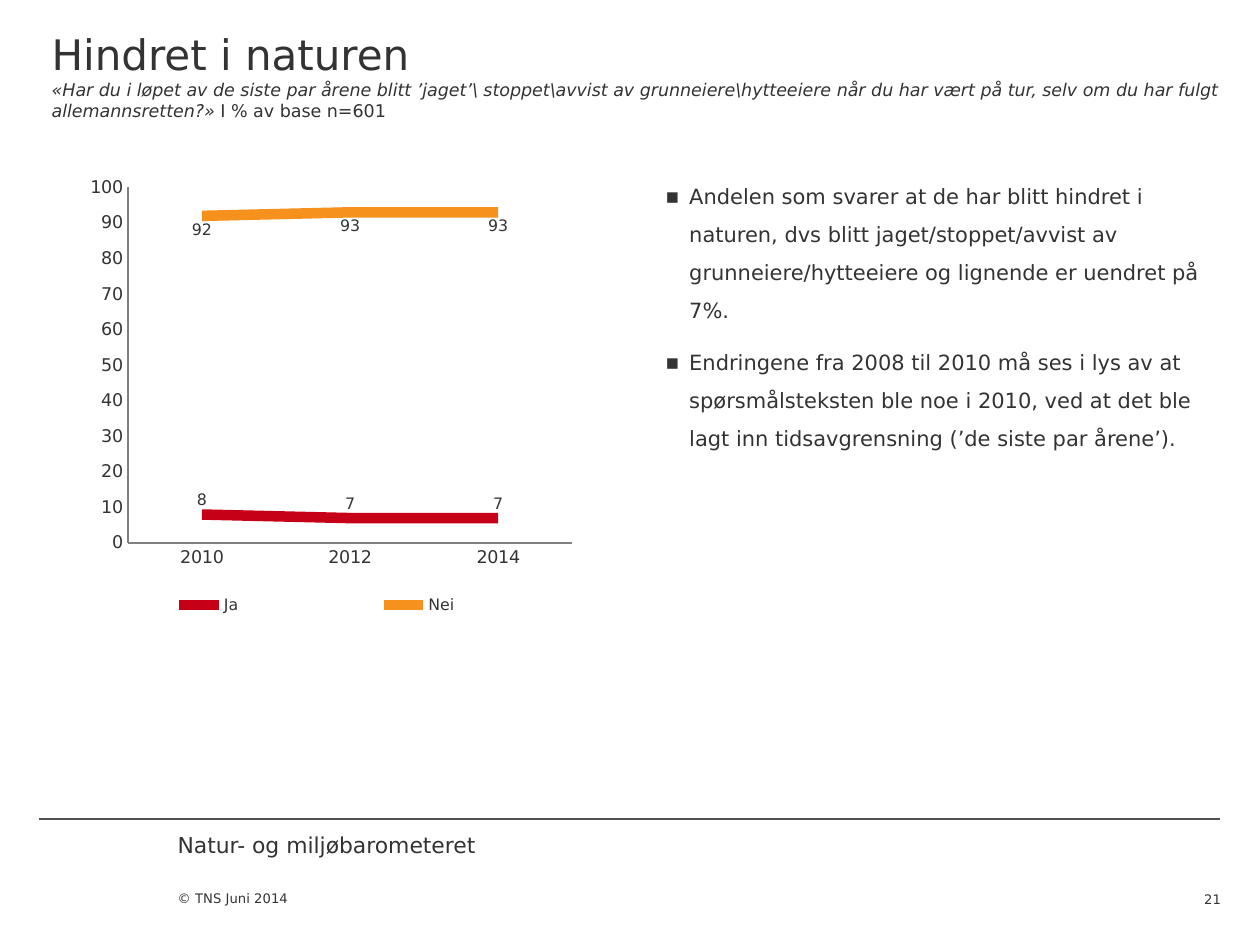
"""Build the slide "Hindret i naturen": a line chart beside two bullet points."""
from lxml.etree import SubElement
from pptx import Presentation
from pptx.chart.data import CategoryChartData
from pptx.dml.color import RGBColor
from pptx.enum.chart import XL_CHART_TYPE as ChartType, XL_LABEL_POSITION as LabelPosition
from pptx.enum.chart import XL_LEGEND_POSITION as LegendPosition, XL_MARKER_STYLE as MarkerStyle
from pptx.enum.chart import XL_TICK_MARK as TickMark
from pptx.enum.shapes import MSO_CONNECTOR as Connector
from pptx.enum.text import MSO_ANCHOR as Anchor, MSO_AUTO_SIZE as AutoSize, PP_ALIGN as Align
from pptx.oxml import parse_xml
from pptx.oxml.ns import nsdecls, qn
from pptx.util import Inches, Pt

FONT = "DejaVu Sans"
COLORS = {"text": "333333", "rule": "525252", "axis": "808080", "Ja": "C50017", "Nei": "F7911E"}


def write(text, paragraph=None, shape=None, box=None, size=12, italic=False,
          align=Align.LEFT, anchor=Anchor.TOP, top=0, right=0, bottom=0):
    """Add a run of text, first placing the shape that holds it when one is given."""
    if shape is not None:
        shape.left, shape.top, shape.width, shape.height = [Inches(value) for value in box]
        frame = shape.text_frame
        frame.word_wrap = True
        frame.auto_size = AutoSize.NONE
        frame.vertical_anchor = anchor
        frame.margin_left, frame.margin_top = 0, Inches(top)
        frame.margin_right, frame.margin_bottom = Inches(right), Inches(bottom)
        paragraph = frame.paragraphs[0]
    paragraph.alignment = align
    run = paragraph.add_run()
    run.text = text
    font = run.font
    font.name, font.size, font.italic, font.bold = FONT, Pt(size), italic, False
    font.color.rgb = RGBColor.from_string(COLORS["text"])
    return paragraph


def set_layout(element, index, x, y, width, height, inner=False):
    """Give a chart part a fixed place, in fractions of the chart."""
    for old in element.findall(qn("c:layout")):
        element.remove(old)
    layout = parse_xml(f"<c:layout {nsdecls('c')}><c:manualLayout/></c:layout>")
    entries = [("layoutTarget", "inner")] if inner else []
    entries += [("xMode", "edge"), ("yMode", "edge"), ("x", x), ("y", y), ("w", width), ("h", height)]
    for tag, value in entries:
        SubElement(layout[0], qn(f"c:{tag}")).set("val", str(value))
    element.insert(index, layout)


presentation = Presentation()
presentation.slide_width, presentation.slide_height = Inches(10), Inches(7.5)
slide = presentation.slides.add_slide(presentation.slide_layouts[1])
shapes = slide.shapes

rule = shapes.add_connector(Connector.STRAIGHT, Inches(0.31), Inches(6.5), Inches(9.68), Inches(6.5))
rule.line.color.rgb = RGBColor.from_string(COLORS["rule"])
rule.line.width = Pt(0.75)
SubElement(rule._element.spPr, qn("a:effectLst"))

title = write("Hindret i naturen", shape=shapes.title, box=(0.41, 0, 9.37, 1.13), size=24, top=0.23)
title.add_line_break()
write("«Har du i løpet av de siste par årene blitt ’jaget’\\ stoppet\\avvist av grunneiere\\hytteeiere "
      "når du har vært på tur, selv om du har fulgt allemannsretten?» ", title, size=10, italic=True)
write("I % av base n=601", title, size=10)

bullets = [
    "Andelen som svarer at de har blitt hindret i naturen, dvs blitt jaget/stoppet/avvist av "
    "grunneiere/hytteeiere og lignende er uendret på 7%.",
    "Endringene fra 2008 til 2010 må ses i lys av at spørsmålsteksten ble noe i 2010, ved at det ble "
    "lagt inn tidsavgrensning (’de siste par årene’).",
]
body = slide.placeholders[1]
for number, text in enumerate(bullets):
    if number == 0:
        paragraph = write(text, shape=body, box=(5.28, 1.13, 4.41, 5.25), top=0.23)
    else:
        paragraph = write(text, body.text_frame.add_paragraph())
    properties = paragraph._p.get_or_add_pPr()
    properties.set("marL", str(Inches(0.19)))
    properties.set("indent", str(Inches(-0.19)))
    SubElement(properties, qn("a:buFont")).set("typeface", FONT)
    SubElement(properties, qn("a:buChar")).set("char", "▪")
    paragraph.line_spacing = 1.5
    paragraph.space_before = Pt(2.4 if number else 0)
    paragraph.space_after = Pt(6)

data = CategoryChartData(number_format="#,##0")
data.categories = ["2010", "2012", "2014"]
data.add_series("Ja", (8, 7, 7))
data.add_series("Nei", (92, 93, 93))
chart = shapes.add_chart(ChartType.LINE, Inches(0.31), Inches(1.13), Inches(4.41), Inches(4.48), data).chart
chart.has_title = False
chart.font.name, chart.font.size = FONT, Pt(10)
chart.font.color.rgb = RGBColor.from_string(COLORS["text"])
chart.plots[0].vary_by_categories = False

for axis in (chart.category_axis, chart.value_axis):
    axis.has_major_gridlines = False
    axis.major_tick_mark = axis.minor_tick_mark = TickMark.NONE
    axis.format.line.color.rgb = RGBColor.from_string(COLORS["axis"])
    axis.format.line.width = Pt(0.75)
    axis.tick_labels.font.size = Pt(10)
chart.value_axis.minimum_scale, chart.value_axis.maximum_scale = 0, 100
chart.value_axis.major_unit = 10

for series, position in zip(chart.plots[0].series, (LabelPosition.ABOVE, LabelPosition.BELOW)):
    series.smooth = False
    series.marker.style = MarkerStyle.NONE
    series.format.line.color.rgb = RGBColor.from_string(COLORS[series.name])
    series.format.line.width = Pt(6)
    labels = series.data_labels
    labels.show_value = True
    labels.position = position
    labels.font.size = Pt(9)

chart.has_legend = True
chart.legend.position = LegendPosition.BOTTOM
chart.legend.include_in_layout = False
chart.legend.font.size = Pt(9)
set_layout(chart.legend._element, 1, 0, 0.79, 1, 0.06)
set_layout(chart._chartSpace.chart.plotArea, 0, 0.16, 0.08, 0.8, 0.63, inner=True)

footers = [
    ("Natur- og miljøbarometeret", (1.41, 6.6, 3.31, 0.42), {"size": 12.5}),
    ("© TNS Juni 2014", (1.41, 6.92, 2.78, 0.58), {"size": 7.5, "anchor": Anchor.BOTTOM, "bottom": 0.31}),
    ("21", (9.14, 6.92, 0.55, 0.28), {"size": 7.5, "anchor": Anchor.BOTTOM, "align": Align.RIGHT}),
]
for text, box, style in footers:
    write(text, shape=shapes.add_textbox(0, 0, 0, 0), box=box, **style)

presentation.save("out.pptx")
